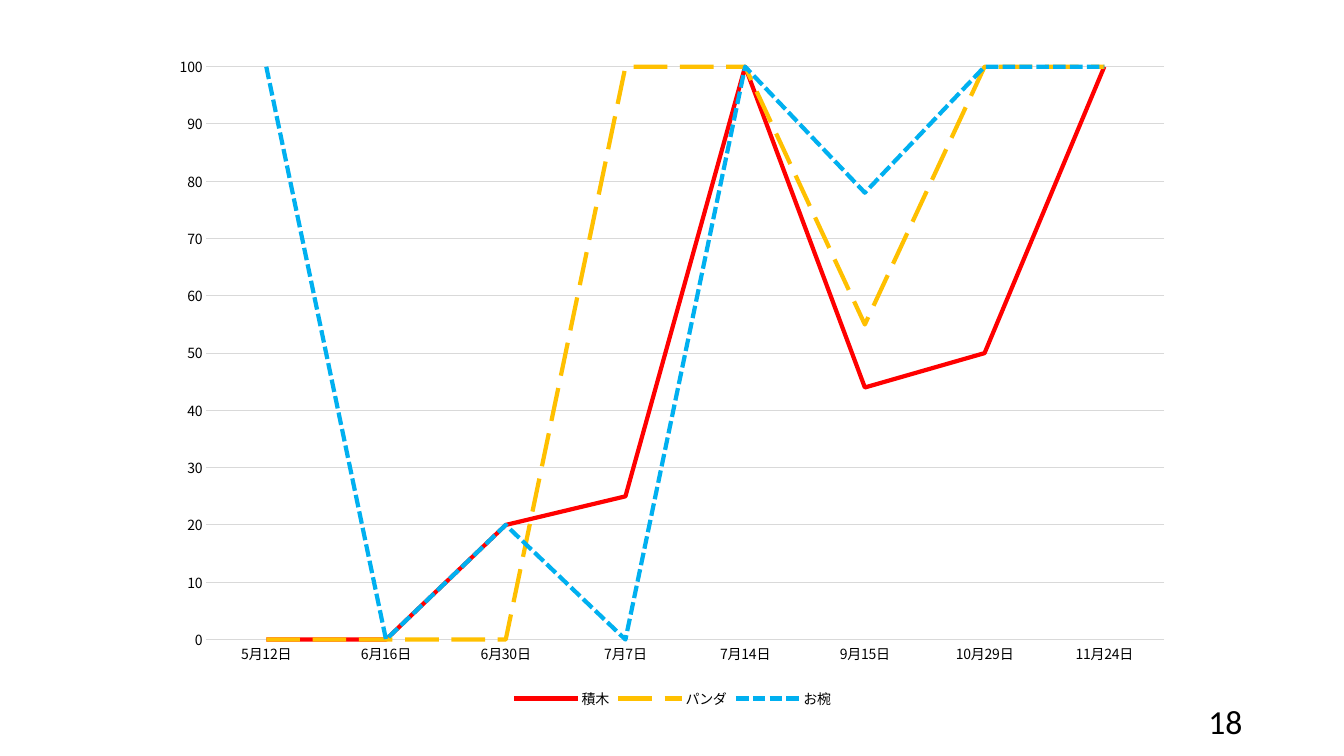
from dataclasses import dataclass

from lxml.etree import SubElement
from pptx import Presentation
from pptx.chart.data import CategoryChartData
from pptx.dml.color import RGBColor
from pptx.enum.chart import XL_CHART_TYPE, XL_LEGEND_POSITION, XL_TICK_MARK
from pptx.enum.dml import MSO_LINE
from pptx.enum.text import MSO_ANCHOR, PP_ALIGN
from pptx.oxml import parse_xml
from pptx.oxml.ns import nsdecls, qn
from pptx.util import Inches, Pt


@dataclass(frozen=True)
class Theme:
    text: RGBColor = RGBColor(0x00, 0x00, 0x00)
    grid: RGBColor = RGBColor(0xD9, 0xD9, 0xD9)
    red: RGBColor = RGBColor(0xFF, 0x00, 0x00)
    amber: RGBColor = RGBColor(0xFF, 0xC0, 0x00)
    blue: RGBColor = RGBColor(0x00, 0xB0, 0xF0)
    chart_font: str = "Noto Sans CJK JP"
    number_font: str = "Calibri"
    chart_size: Pt = Pt(10)
    number_size: Pt = Pt(24)
    grid_width: Pt = Pt(0.75)
    series_width: Pt = Pt(3)


THEME = Theme()

DATES = ["5月12日", "6月16日", "6月30日", "7月7日",
         "7月14日", "9月15日", "10月29日", "11月24日"]
# Name, values, colour, dash
SERIES = [
    ("積木", (0, 0, 20, 25, 100, 44, 50, 100), THEME.red, MSO_LINE.SOLID),
    ("パンダ", (0, 0, 0, 100, 100, 55, 100, 100), THEME.amber, MSO_LINE.LONG_DASH),
    ("お椀", (100, 0, 20, 0, 100, 78, 100, 100), THEME.blue, MSO_LINE.SQUARE_DOT),
]
# Plot position as fractions of the chart box
PLOT_LAYOUT = {"x": 0.045, "y": 0.035, "w": 0.935, "h": 0.856}


def style_line(line, color, width):
    line.color.rgb = color
    line.width = width


def set_plot_layout(chart):
    plot_area = chart._chartSpace.chart.plotArea
    for old in plot_area.findall(qn("c:layout")):
        plot_area.remove(old)
    layout = parse_xml(f"<c:layout {nsdecls('c')}/>")
    manual = SubElement(layout, qn("c:manualLayout"))
    settings = {"layoutTarget": "inner", "xMode": "edge", "yMode": "edge", **PLOT_LAYOUT}
    for tag, value in settings.items():
        SubElement(manual, qn(f"c:{tag}")).set("val", str(value))
    plot_area.insert(0, layout)


def add_line_chart(s, left, top, width, height):
    data = CategoryChartData()
    data.categories = DATES
    for name, values, _, _ in SERIES:
        data.add_series(name, values)
    chart = s.shapes.add_chart(
        XL_CHART_TYPE.LINE, left, top, width, height, data).chart
    chart.has_title = False
    chart.font.name = THEME.chart_font
    chart.font.size = THEME.chart_size
    chart.font.color.rgb = THEME.text
    set_plot_layout(chart)

    # Axes and grid
    dates, scores = chart.category_axis, chart.value_axis
    for axis in (dates, scores):
        axis.major_tick_mark = axis.minor_tick_mark = XL_TICK_MARK.NONE
    style_line(dates.format.line, THEME.grid, THEME.grid_width)
    scores.format.line.fill.background()
    scores.minimum_scale, scores.maximum_scale, scores.major_unit = 0, 100, 10
    style_line(scores.major_gridlines.format.line, THEME.grid, THEME.grid_width)

    # Legend
    chart.has_legend = True
    chart.legend.position = XL_LEGEND_POSITION.BOTTOM
    chart.legend.include_in_layout = False

    # Series lines
    plot = chart.plots[0]
    plot.vary_by_categories = False
    for series, (_, _, color, dash) in zip(plot.series, SERIES):
        series.smooth = False
        style_line(series.format.line, color, THEME.series_width)
        series.format.line.dash_style = dash


def add_page_number(s, left, top, width, height, number):
    tf = s.shapes.add_textbox(left, top, width, height).text_frame
    tf.word_wrap = True
    tf.vertical_anchor = MSO_ANCHOR.MIDDLE
    p = tf.paragraphs[0]
    p.text = number
    p.alignment = PP_ALIGN.RIGHT
    p.font.name = THEME.number_font
    p.font.size = THEME.number_size
    p.font.color.rgb = THEME.text


def main():
    prs = Presentation()
    prs.slide_width, prs.slide_height = Inches(13.33), Inches(7.5)
    s = prs.slides.add_slide(prs.slide_layouts[6])
    add_page_number(s, Inches(9.42), Inches(6.95), Inches(3), Inches(0.4), "18")
    add_line_chart(s, Inches(1.59), Inches(0.43), Inches(10.16), Inches(6.64))
    prs.save("out.pptx")


if __name__ == "__main__":
    main()
